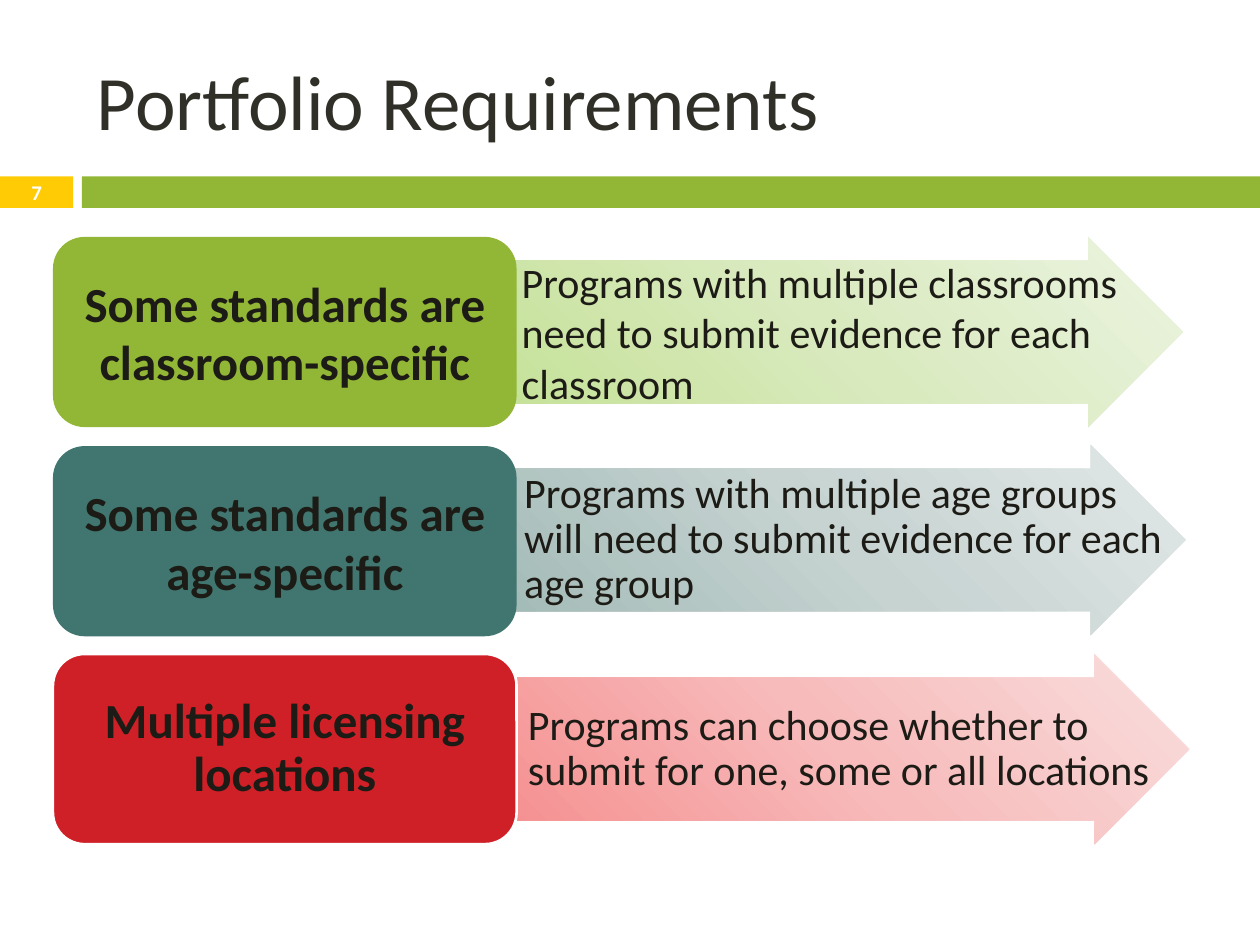
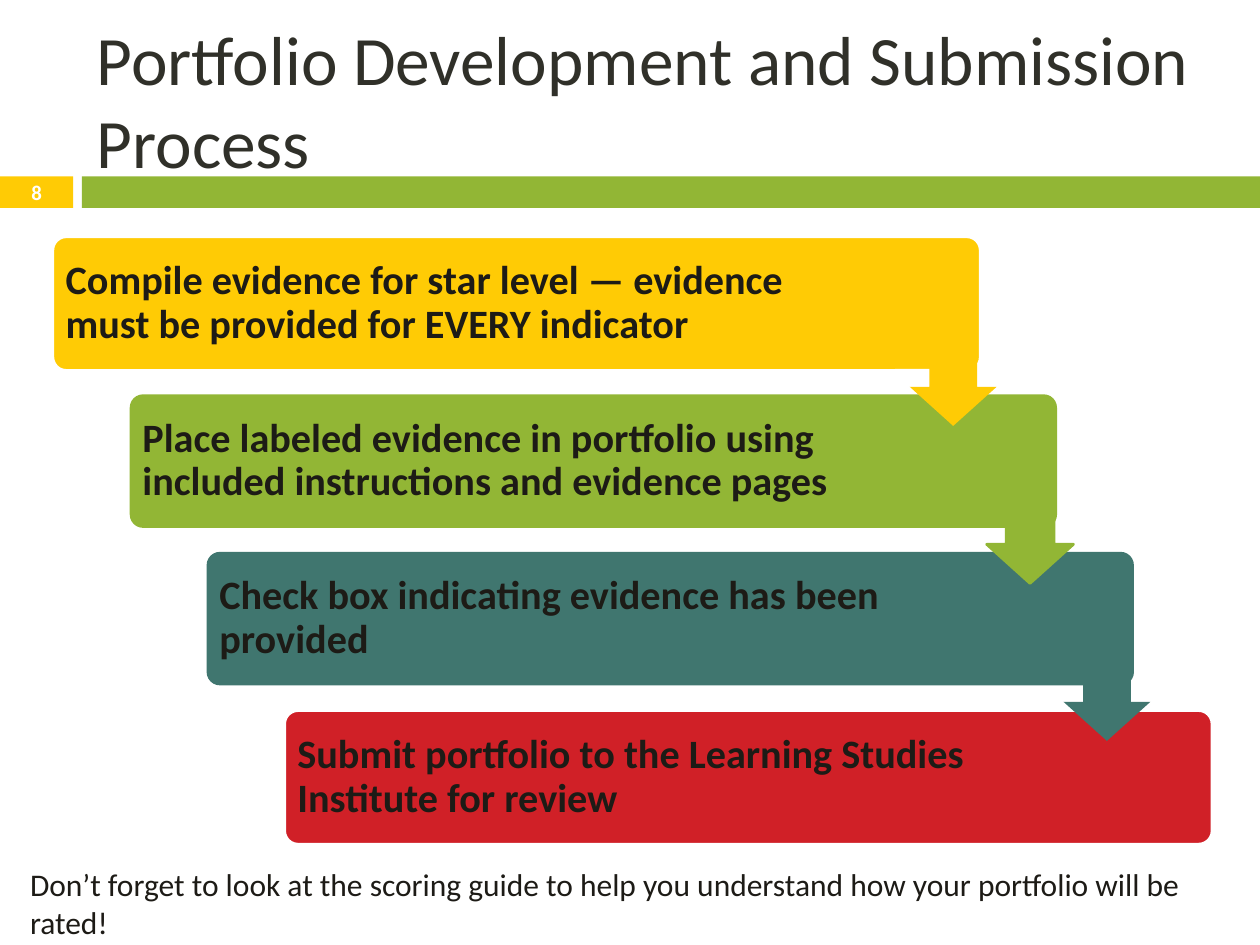
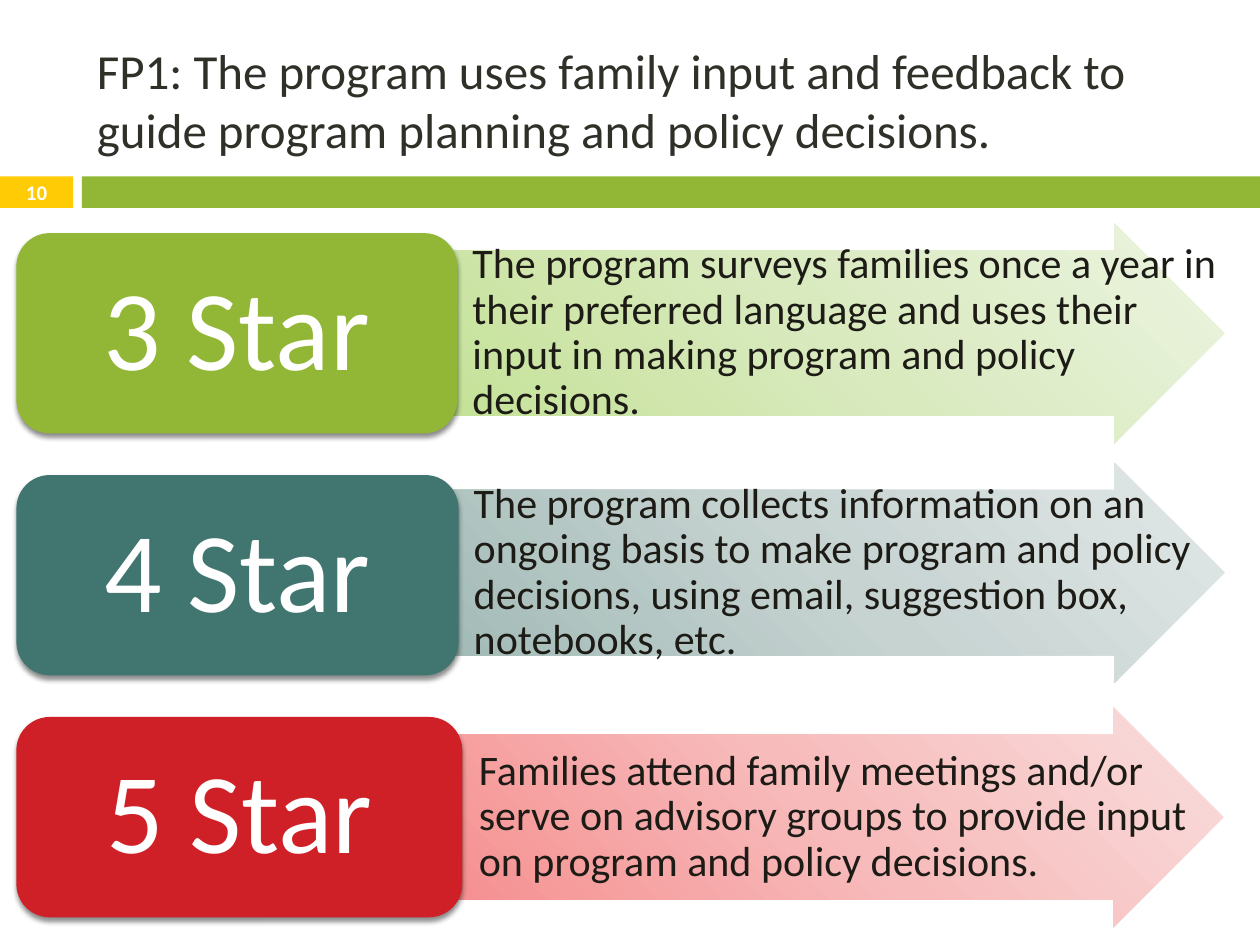
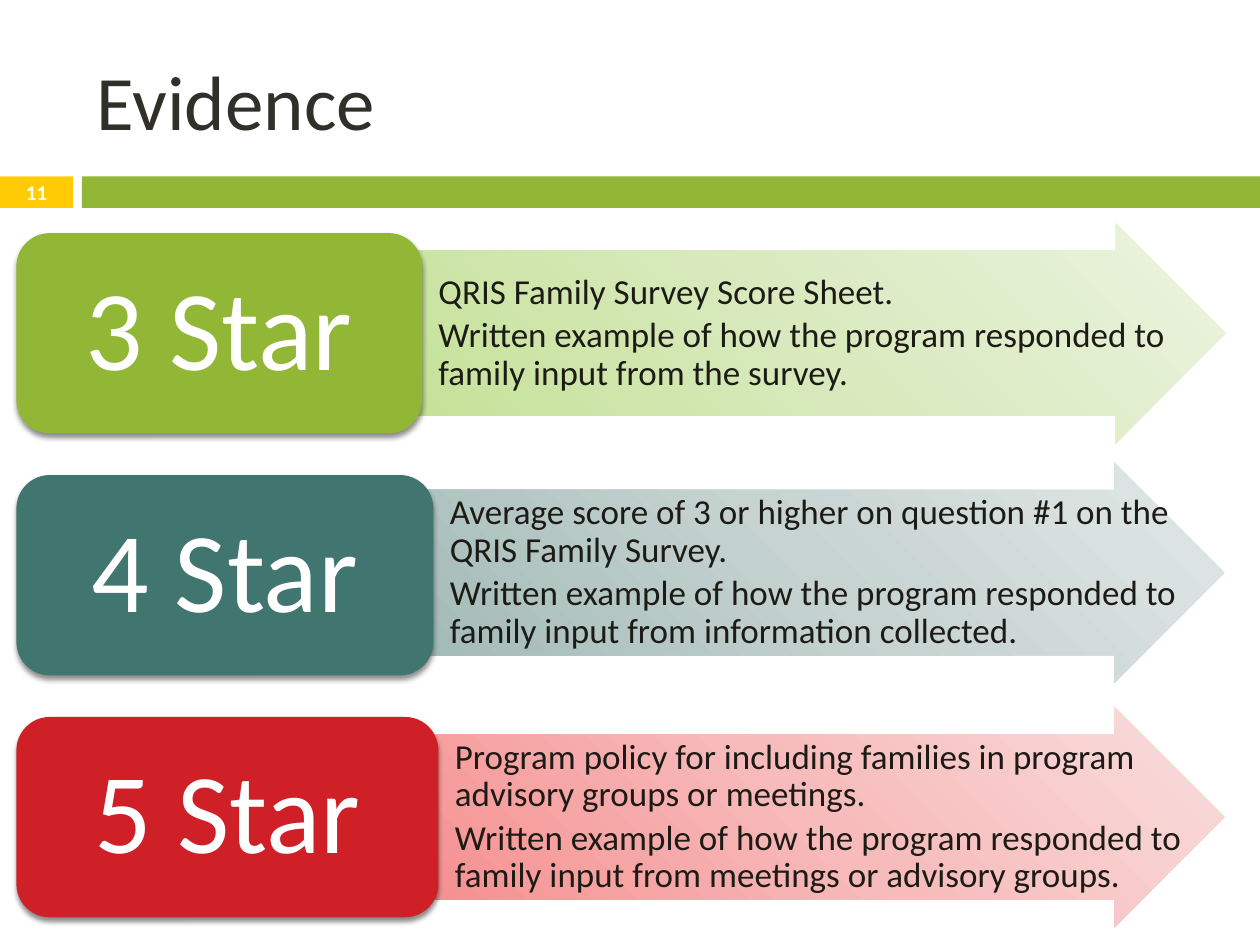
from dataclasses import dataclass

from pptx import Presentation
from pptx.dml.color import RGBColor
from pptx.enum.shapes import MSO_SHAPE
from pptx.enum.text import MSO_ANCHOR, PP_ALIGN
from pptx.oxml import parse_xml
from pptx.oxml.ns import nsdecls
from pptx.util import Emu, Pt

PX = 9144


@dataclass(frozen=True)
class Theme:
    font: str = "Calibri"
    title: str = "303029"
    ink: str = "1D1B16"
    white: str = "FFFFFF"
    yellow: str = "FFCB05"
    green: str = "92B635"
    teal: str = "40766F"
    red: str = "D02027"
    green_fade: tuple = ("C4E195", "D9EABF", "ECF4E0")
    teal_fade: tuple = ("A0B9B5", "C6D3D1", "E3E9E8")
    red_fade: tuple = ("F58D8E", "F7BBBB", "FADEDE")
    title_size: float = 44
    long_title_size: float = 39.6
    standard_title_size: float = 28
    number_size: float = 11.9
    label_size: float = 28
    star_size: float = 65
    detail_size: float = 24
    evidence_size: float = 20
    step_size: float = 23
    note_size: float = 18
    outline: float = 1.5
    tight: float = 0.9


def px(*values):
    return [Emu(v * PX) for v in values]


class Deck:
    def __init__(self, theme):
        self.t = theme
        self.prs = Presentation()
        self.prs.slide_width, self.prs.slide_height = px(1000, 750)
        self.s = None

    def slide(self, number, title, size=None):
        t = self.t
        self.s = self.prs.slides.add_slide(self.prs.slide_layouts[6])
        badge = self.shape(MSO_SHAPE.RECTANGLE, (0, 140, 58, 25), t.yellow)
        self.fill_text(badge, [str(number)], t.number_size, t.white, bold=True,
                       align=PP_ALIGN.CENTER, insets=(0, 0, 0, 0))
        self.shape(MSO_SHAPE.RECTANGLE, (65, 140, 935, 25), t.green)
        self.text((67, 25, 892, 108), [title], size or t.title_size, t.title)

    def shape(self, kind, box, fill, adj=(), line=None, shadow=False):
        sp = self.s.shapes.add_shape(kind, *px(*box))
        for i, value in enumerate(adj):
            sp.adjustments[i] = value
        if isinstance(fill, tuple):
            self.fade(sp, fill)
        else:
            sp.fill.solid()
            sp.fill.fore_color.rgb = RGBColor.from_string(fill)
        if line:
            sp.line.color.rgb = RGBColor.from_string(line)
            sp.line.width = Pt(self.t.outline)
        else:
            sp.line.fill.background()
        sp.shadow.inherit = False
        if shadow:
            self.drop_shadow(sp)
        return sp

    def fade(self, sp, colors):
        stops = "".join(
            f'<a:gs pos="{i * 50000}"><a:srgbClr val="{c}"/></a:gs>'
            for i, c in enumerate(colors))
        sp._element.spPr.insert(2, parse_xml(
            f'<a:gradFill {nsdecls("a")} rotWithShape="1"><a:gsLst>{stops}</a:gsLst>'
            '<a:path path="circle"><a:fillToRect t="100000" r="100000"/></a:path>'
            '</a:gradFill>'))

    def drop_shadow(self, sp):
        effects = sp._element.spPr.find(
            "{http://schemas.openxmlformats.org/drawingml/2006/main}effectLst")
        effects.append(parse_xml(
            f'<a:outerShdw {nsdecls("a")} blurRad="38100" dist="30000" dir="5400000" '
            'rotWithShape="0"><a:srgbClr val="000000"><a:alpha val="45000"/>'
            '</a:srgbClr></a:outerShdw>'))

    def text(self, box, paragraphs, size, color, **style):
        sp = self.s.shapes.add_textbox(*px(*box))
        self.fill_text(sp, paragraphs, size, color, **style)

    def fill_text(self, sp, paragraphs, size, color, bold=False, align=PP_ALIGN.LEFT,
                  anchor=MSO_ANCHOR.MIDDLE, insets=(10, 5, 10, 5), spacing=None,
                  after=0):
        tf = sp.text_frame
        tf.word_wrap = True
        tf.vertical_anchor = anchor
        (tf.margin_left, tf.margin_top,
         tf.margin_right, tf.margin_bottom) = px(*insets)
        for i, content in enumerate(paragraphs):
            p = tf.add_paragraph() if i else tf.paragraphs[0]
            p.alignment = align
            p.space_after = Pt(after)
            if spacing:
                p.line_spacing = spacing
            r = p.add_run()
            r.text = content
            r.font.name = self.t.font
            r.font.size = Pt(size)
            r.font.bold = bold
            r.font.color.rgb = RGBColor.from_string(color)

    def arrow(self, box, colors, paragraphs, size, spacing):
        self.shape(MSO_SHAPE.RIGHT_ARROW, box, colors, (0.75, 0.5))
        self.text(box, paragraphs, size, self.t.ink, spacing=spacing, after=3,
                  insets=(27, 2, 2, 2))

    def label(self, box, fill, content, size, color, bold=False, spacing=None,
              line=None, shadow=False):
        sp = self.shape(MSO_SHAPE.ROUNDED_RECTANGLE, box, fill, line=line, shadow=shadow)
        self.fill_text(sp, [content], size, color, bold=bold, align=PP_ALIGN.CENTER,
                       insets=(5, 5, 5, 5), spacing=spacing)

    def star_rows(self, size, rows):
        t = self.t
        fills = (t.green, t.teal, t.red)
        fades = (t.green_fade, t.teal_fade, t.red_fade)
        arrow_tops = (177, 367, 561)
        for i, (label_width, left, width, paragraphs) in enumerate(rows):
            self.arrow((left, arrow_tops[i], width, 175), fades[i], paragraphs,
                       size, t.tight)
            self.label((13, 185 + 192 * i, label_width, 159), fills[i],
                       f"{i + 3} Star", t.star_size, t.white, spacing=t.tight,
                       shadow=True)

    def steps(self, rows):
        t = self.t
        corners = [(42 + 184 * i // 3, 188 + 376 * i // 3) for i in range(len(rows))]
        for (x, y), (fill, line, _, content) in zip(corners, rows):
            sp = self.shape(MSO_SHAPE.ROUNDED_RECTANGLE, (x, y, 736, 106), fill,
                            (0.1,), line)
            self.fill_text(sp, [content], t.step_size, t.ink, bold=True,
                           insets=(7, 7, 138, 7), spacing=t.tight)
        for (x, y), (fill, _, arrow_line, _) in zip(corners[:-1], rows):
            self.shape(MSO_SHAPE.DOWN_ARROW, (x + 680, y + 81, 69, 69), fill,
                       (0.55, 0.45), arrow_line)


def requirements(deck):
    t = deck.t
    deck.slide(7, "Portfolio Requirements")
    rows = [
        (387, 188, 188, t.green, t.green_fade, None, None, None,
         "Some standards are classroom-specific",
         "Programs with multiple classrooms need to submit evidence for each classroom"),
        (389, 353, 354, t.teal, t.teal_fade, t.tight, None, None,
         "Some standards are age-specific",
         "Programs with multiple age groups will need to submit evidence for each age group"),
        (392, 519, 519, t.red, t.red_fade, t.tight, t.tight, t.white,
         "Multiple licensing locations",
         "Programs can choose whether to submit for one, some or all locations"),
    ]
    for (left, arrow_top, label_top, fill, fade, arrow_spacing, label_spacing,
         line, label, detail) in rows:
        deck.arrow((left, arrow_top, 552, 151), fade, [detail], t.detail_size,
                   arrow_spacing)
        deck.label((42, label_top, 368, 151), fill, label, t.label_size, t.ink,
                   bold=True, spacing=label_spacing, line=line)


def process(deck):
    t = deck.t
    deck.slide(8, "Portfolio Development and Submission Process", t.long_title_size)
    deck.steps([
        (t.yellow, t.white, None,
         "Compile evidence for star level — evidence must be provided for EVERY indicator"),
        (t.green, None, t.green,
         "Place labeled evidence in portfolio using included instructions and evidence pages"),
        (t.teal, None, None, "Check box indicating evidence has been provided"),
        (t.red, t.white, None,
         "Submit portfolio to the Learning Studies Institute for review"),
    ])
    deck.text((14, 682, 986, 40),
              ["Don’t forget to look at the scoring guide to help you understand "
               "how your portfolio will be rated!"],
              t.note_size, t.ink, anchor=MSO_ANCHOR.TOP)


def family_input(deck):
    deck.slide(10, "FP1: The program uses family input and feedback to guide program "
                   "planning and policy decisions.", deck.t.standard_title_size)
    deck.star_rows(deck.t.detail_size, [
        (350, 348, 624,
         ["The program surveys families once a year in their preferred language and "
          "uses their input in making program and policy decisions."]),
        (351, 349, 623,
         ["The program collects information on an ongoing basis to make program and "
          "policy decisions, using email, suggestion box, notebooks, etc."]),
        (354, 353, 618,
         ["Families attend family meetings and/or serve on advisory groups to provide "
          "input on program and policy decisions."]),
    ])


def evidence(deck):
    example = "Written example of how the program responded to family input from "
    deck.slide(11, "Evidence")
    deck.star_rows(deck.t.evidence_size, [
        (322, 321, 652,
         ["QRIS Family Survey Score Sheet.", example + "the survey."]),
        (331, 330, 642,
         ["Average score of 3 or higher on question #1 on the QRIS Family Survey.",
          example + "information collected."]),
        (335, 334, 638,
         ["Program policy for including families in program advisory groups or meetings.",
          example + "meetings or advisory groups."]),
    ])


def main():
    deck = Deck(Theme())
    for build in (requirements, process, family_input, evidence):
        build(deck)
    deck.prs.save("out.pptx")


if __name__ == "__main__":
    main()
